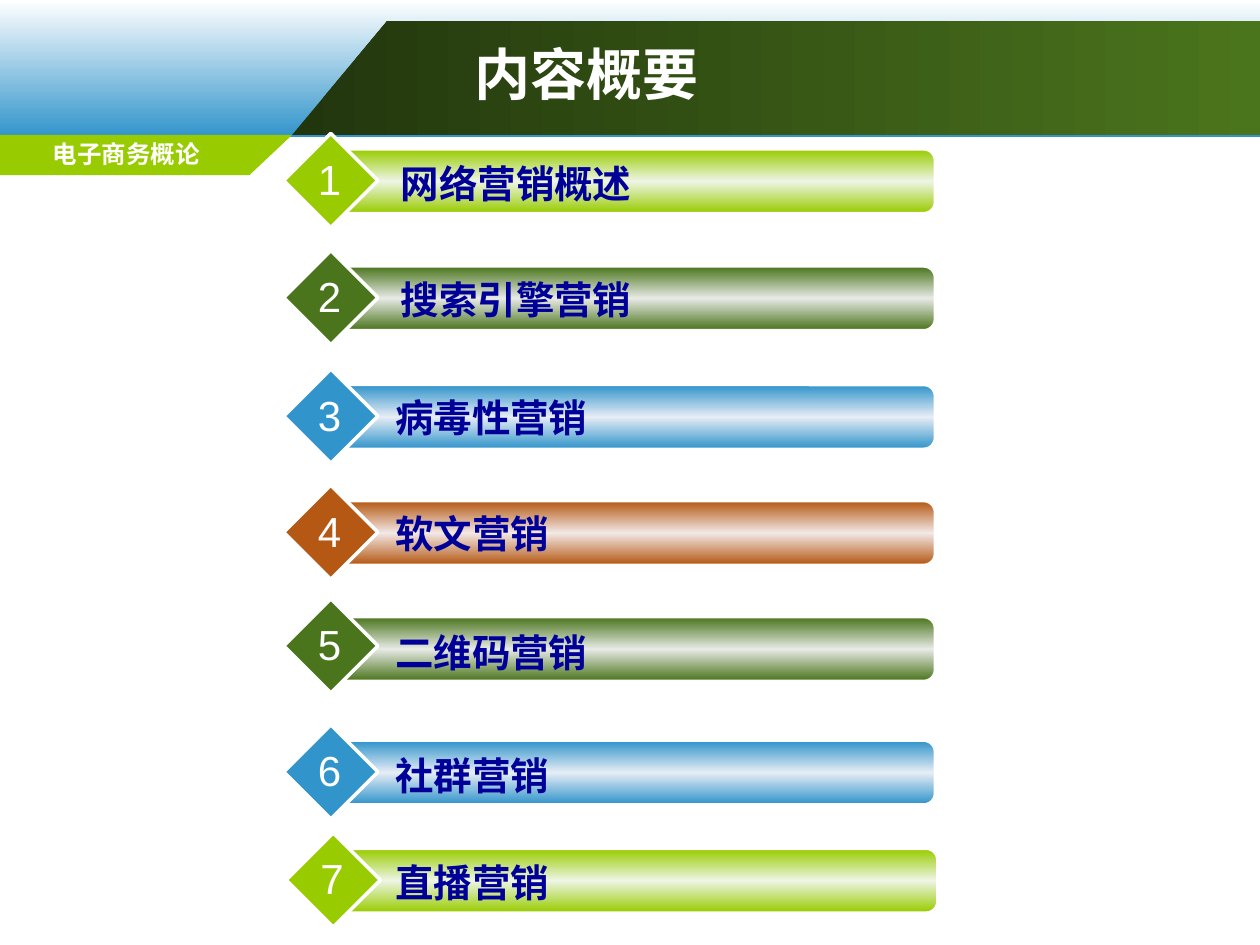
from lxml import etree
from pptx import Presentation
from pptx.dml.color import RGBColor
from pptx.enum import lang, shapes, text
from pptx.oxml import ns
from pptx.util import Cm, Pt

WHITE = RGBColor(0xFF, 0xFF, 0xFF)
NAVY = RGBColor(0x00, 0x00, 0x99)
LIME = RGBColor(0x99, 0xCC, 0x00)
GREEN = RGBColor(0x4B, 0x75, 0x1D)
DARK_GREEN = RGBColor(0x22, 0x36, 0x0D)
BLUE = RGBColor(0x31, 0x94, 0xCB)
ORANGE = RGBColor(0xB5, 0x58, 0x13)

TITLE = "内容概要"
COURSE = "电子商务概论"

# colour: (pale middle of the bar, label width in cm)
THEMES = {
    LIME: (RGBColor(0xEE, 0xF5, 0xE6), 11.23),
    GREEN: (RGBColor(0xE8, 0xEA, 0xE6), 10.36),
    BLUE: (RGBColor(0xE7, 0xED, 0xF5), 11.86),
    ORANGE: (RGBColor(0xF2, 0xE8, 0xE6), 9.53),
}

# topic, colour, shift of the row, tops of bar, diamond and label,
# left of the label and of its text (cm)
TOPICS = [
    ("网络营销概述", LIME, 0, 3.02, 2.69, 3.10, 7.54, 8.08),
    ("搜索引擎营销", GREEN, 0, 5.38, 5.05, 5.44, 7.54, 8.08),
    ("病毒性营销", BLUE, 0, 7.77, 7.44, 7.82, 7.42, 7.97),
    ("软文营销", ORANGE, 0, 10.11, 9.78, 10.16, 7.42, 7.97),
    ("二维码营销", GREEN, 0, 12.45, 12.07, 12.55, 7.42, 7.97),
    ("社群营销", BLUE, 0, 14.94, 14.61, 15.04, 7.42, 7.97),
    ("直播营销", LIME, 0.05, 17.12, 16.79, 17.20, 7.59, 7.97),
]

TITLE_FONT = {"name": "Arial", "size": Pt(32), "bold": True}
COURSE_FONT = {"name": "DejaVu Sans", "size": Pt(14), "bold": True}
LABEL_FONT = {"name": "Arial", "size": Pt(22), "bold": True}
NUMBER_FONT = {"name": "Arial", "size": Pt(24), "bold": False}


def fill_gradient(shape, colors, angle):
    """Spread colors evenly; angle runs counter-clockwise from left to right."""
    shape.fill.gradient()
    shape.fill.gradient_angle = angle
    stops = shape.element.spPr.find(".//" + ns.qn("a:gsLst"))
    for stop in list(stops):
        stops.remove(stop)
    for i, color in enumerate(colors):
        position = str(i * 100000 // (len(colors) - 1))
        stop = etree.SubElement(stops, ns.qn("a:gs"), pos=position)
        etree.SubElement(stop, ns.qn("a:srgbClr"), val=str(color))


def finish(shape, line_width=0):
    shape.shadow.inherit = False
    if line_width:
        shape.line.color.rgb = WHITE
        shape.line.width = Pt(line_width)
    else:
        shape.line.fill.background()


def add_preset(parent, preset, box, line_width=0):
    shape = parent.add_shape(preset, *map(Cm, box))
    finish(shape, line_width)
    return shape


def add_outline(parent, points):
    first, *rest = [(Cm(x), Cm(y)) for x, y in points]
    builder = parent.build_freeform(*first)
    builder.add_line_segments(rest, close=True)
    shape = builder.convert_to_shape()
    finish(shape)
    return shape


def write(frame, words, font, color=WHITE, align=text.PP_ALIGN.LEFT, indent=0.25):
    frame.margin_left = Cm(indent)
    paragraph = frame.paragraphs[0]
    paragraph.alignment = align
    run = paragraph.add_run()
    run.text = words
    for key, value in font.items():
        setattr(run.font, key, value)
    run.font.color.rgb = color
    run.font.language_id = lang.MSO_LANGUAGE_ID.SIMPLIFIED_CHINESE


def add_text(parent, box, words, font, wrap=True, **style):
    frame = parent.add_textbox(*map(Cm, box)).text_frame
    frame.word_wrap = wrap
    write(frame, words, font, **style)


def add_header(slide):
    parent = slide.shapes
    sky = add_preset(parent, shapes.MSO_SHAPE.RECTANGLE, (0, 0, 25.4, 2.77))
    fill_gradient(sky, [WHITE, BLUE], 270)
    band = add_outline(parent, [(5.89, 2.72), (25.43, 2.72), (25.43, 0.43), (7.8, 0.43)])
    fill_gradient(band, [DARK_GREEN, GREEN], 0)
    tab = add_outline(parent, [(0, 2.72), (5.89, 2.72), (5.03, 3.53), (0, 3.53)])
    tab.fill.solid()
    tab.fill.fore_color.rgb = LIME
    add_text(parent, (0.1, 2.67, 4.9, 0.79), COURSE, COURSE_FONT,
             align=text.PP_ALIGN.CENTER)

    title = parent.title
    parent.element.append(title.element)  # bring in front of the band
    title.left, title.top, title.width, title.height = map(Cm, (8.05, 0.64, 14.4, 1.68))
    title.text_frame.vertical_anchor = text.MSO_ANCHOR.MIDDLE
    write(title.text_frame, TITLE, TITLE_FONT, indent=1.52)


def add_topic(slide, number, topic):
    words, color, shift, bar_top, diamond_top, label_top, label_left, text_left = topic
    pale, label_width = THEMES[color]
    parent = slide.shapes.add_group_shape().shapes

    bar = add_preset(parent, shapes.MSO_SHAPE.ROUNDED_RECTANGLE,
                     (6.78 + shift, bar_top, 12.06, 1.27), 1)
    bar.adjustments[0] = 0.17
    fill_gradient(bar, [color, pale, color], 270)

    diamond = add_preset(parent, shapes.MSO_SHAPE.DIAMOND,
                         (5.72 + shift, diamond_top, 1.9, 1.9), 2)
    diamond.fill.solid()
    diamond.fill.fore_color.rgb = color

    add_text(parent, (label_left, label_top, label_width, 1.19), words, LABEL_FONT,
             color=NAVY, indent=text_left - label_left)
    add_text(parent, (6.15 + shift, diamond_top + 0.28, 0.99, 1.27), str(number),
             NUMBER_FONT, wrap=False, align=text.PP_ALIGN.CENTER)


def main():
    deck = Presentation()
    deck.slide_width, deck.slide_height = Cm(25.4), Cm(19.05)
    slide = deck.slides.add_slide(deck.slide_layouts[5])
    add_header(slide)
    for number, topic in enumerate(TOPICS, 1):
        add_topic(slide, number, topic)
    deck.save("out.pptx")


if __name__ == "__main__":
    main()
